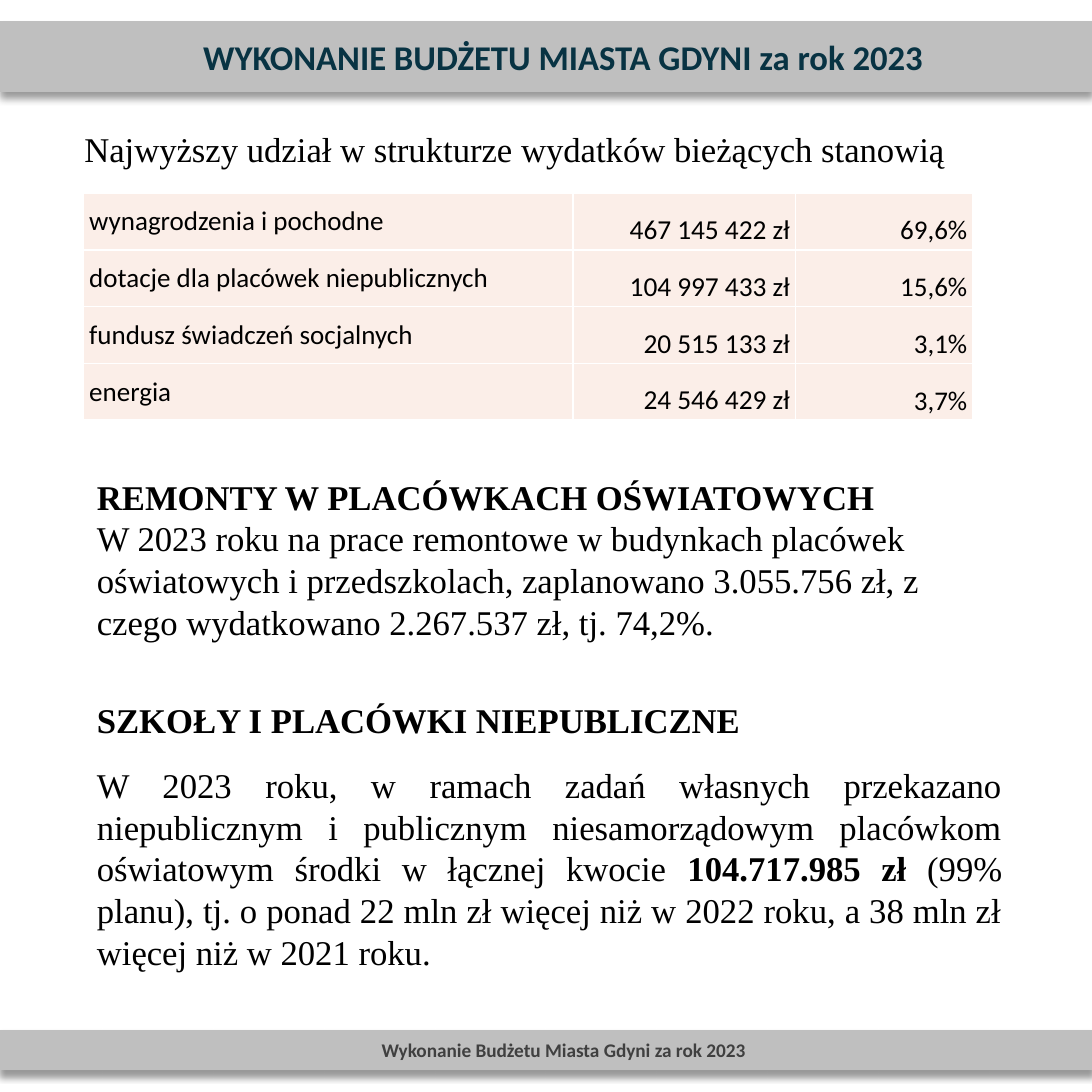
from lxml import etree
from pptx import Presentation
from pptx.dml.color import RGBColor
from pptx.enum.shapes import MSO_SHAPE
from pptx.enum.text import MSO_ANCHOR, MSO_AUTO_SIZE, PP_ALIGN
from pptx.oxml import parse_xml
from pptx.util import Pt

RECTANGLE = MSO_SHAPE.RECTANGLE
MIDDLE, BOTTOM = MSO_ANCHOR.MIDDLE, MSO_ANCHOR.BOTTOM
NO_FIT, GROW = MSO_AUTO_SIZE.NONE, MSO_AUTO_SIZE.SHAPE_TO_FIT_TEXT
LEFT, CENTER, RIGHT, JUSTIFY = PP_ALIGN.LEFT, PP_ALIGN.CENTER, PP_ALIGN.RIGHT, PP_ALIGN.JUSTIFY
DRAWING = "http://schemas.openxmlformats.org/drawingml/2006/main"
COLORS = {"bar": "BFBFBF", "title": "083343", "footer": "404040",
          "text": "000000", "cell": "FBEEE8", "border": "FFFFFF"}
SERIF, SANS = "Times New Roman", "Calibri"
SIDE = 566.64


def add_text(paragraph, text, size=18, font=SERIF, color="text", bold=False, align=None):
    if align is not None:
        paragraph.alignment = align
    run = paragraph.add_run()
    run.text = text
    run.font.size = Pt(size)
    run.font.name = font
    run.font.bold = bold
    run.font.color.rgb = RGBColor.from_string(COLORS[color])


def add_box(left, top, width, height):
    frame = slide.shapes.add_textbox(Pt(left), Pt(top), Pt(width), Pt(height)).text_frame
    frame.word_wrap = True
    frame.auto_size = GROW
    return frame


prs = Presentation()
prs.slide_width = prs.slide_height = Pt(SIDE)
slide = prs.slides.add_slide(prs.slide_layouts[5])

footer = slide.shapes.add_shape(RECTANGLE, 0, 0, Pt(SIDE), Pt(20))
bars = [
    (slide.shapes.title, 11.5, 36, "WYKONANIE BUDŻETU MIASTA GDYNI za rok 2023", 18, "title"),
    (footer, 535, 20, "Wykonanie Budżetu Miasta Gdyni za rok 2023", 10, "footer"),
]
for bar, top, height, caption, size, color in bars:
    bar.left, bar.top, bar.width, bar.height = 0, Pt(top), Pt(SIDE), Pt(height)
    bar.fill.solid()
    bar.fill.fore_color.rgb = RGBColor.from_string(COLORS["bar"])
    bar.line.color.rgb = RGBColor.from_string(COLORS["bar"])
    bar.line.width = Pt(1)
    bar.shadow.inherit = False
    effects = bar._element.spPr.find(f"{{{DRAWING}}}effectLst")
    effects.append(parse_xml(
        f'<a:outerShdw xmlns:a="{DRAWING}" blurRad="{Pt(4)}" dist="{Pt(3)}" dir="5400000" '
        'rotWithShape="0"><a:srgbClr val="000000"><a:alpha val="40000"/></a:srgbClr></a:outerShdw>'))
    frame = bar.text_frame
    frame.word_wrap = True
    frame.auto_size = NO_FIT
    frame.vertical_anchor = MIDDLE
    frame.margin_left = Pt(25.2)
    add_text(frame.paragraphs[0], caption, size=size, font=SANS, color=color, bold=True, align=CENTER)

renovations = add_box(43.2, 232.5, 448, 105)
heading = renovations.paragraphs[0]
heading.line_spacing = 1.5
heading.space_before = Pt(18)
add_text(heading, "REMONTY W PLACÓWKACH OŚWIATOWYCH", bold=True, align=JUSTIFY)
add_text(renovations.add_paragraph(),
         "W 2023 roku na prace remontowe w budynkach placówek oświatowych i przedszkolach, "
         "zaplanowano 3.055.756 zł, z czego wydatkowano 2.267.537 zł, tj. 74,2%.")

private_schools = add_box(43.2, 359.3, 484, 150.5)
add_text(private_schools.paragraphs[0], "SZKOŁY I PLACÓWKI NIEPUBLICZNE", bold=True, align=JUSTIFY)
funding = private_schools.add_paragraph()
add_text(funding, "W 2023 roku, w ramach zadań własnych przekazano niepublicznym i publicznym "
         "niesamorządowym placówkom oświatowym środki w łącznej kwocie ", align=JUSTIFY)
add_text(funding, "104.717.985 zł ", bold=True)
add_text(funding, "(99% planu), tj. o ponad 22 mln zł więcej niż w 2022 roku, "
         "a 38 mln zł więcej niż w 2021 roku.")
for paragraph in private_schools.paragraphs:
    paragraph.space_before = paragraph.space_after = Pt(6)

intro = add_box(13.7, 62.6, 507, 29).paragraphs[0]
intro.space_before, intro.space_after = Pt(12), Pt(6)
add_text(intro, "Najwyższy udział w strukturze wydatków bieżących stanowią", align=CENTER)

expenses = [
    ("wynagrodzenia i pochodne", "467 145 422", "69,6%"),
    ("dotacje dla placówek niepublicznych", "104 997 433", "15,6%"),
    ("fundusz świadczeń socjalnych", "20 515 133", "3,1%"),
    ("energia", "24 546 429", "3,7%"),
]
column_widths = [254, 115.4, 92.1]
row_height = 29.5
table = slide.shapes.add_table(len(expenses), len(column_widths), Pt(43.4), Pt(100.1),
                               Pt(sum(column_widths)), Pt(row_height * len(expenses))).table
table.first_row = table.horz_banding = False
for column, width in zip(table.columns, column_widths):
    column.width = Pt(width)
for row, expense in enumerate(expenses):
    table.rows[row].height = Pt(row_height)
    for col, value in enumerate(expense):
        cell = table.cell(row, col)
        cell.margin_left = cell.margin_right = Pt(2.9)
        cell.margin_top = cell.margin_bottom = Pt(1.44)
        cell.vertical_anchor = BOTTOM if col else MIDDLE
        properties = cell._tc.get_or_add_tcPr()
        for side in ("lnL", "lnR", "lnT", "lnB"):
            border = etree.SubElement(properties, f"{{{DRAWING}}}{side}", w=str(Pt(1)))
            solid = etree.SubElement(border, f"{{{DRAWING}}}solidFill")
            etree.SubElement(solid, f"{{{DRAWING}}}srgbClr", val=COLORS["border"])
        cell.fill.solid()
        cell.fill.fore_color.rgb = RGBColor.from_string(COLORS["cell"])
        entry = cell.text_frame.paragraphs[0]
        add_text(entry, value, size=14.2 if col == 1 else 14, font=SANS, align=RIGHT if col else LEFT)
        if col == 1:
            add_text(entry, " zł", size=14, font=SANS)

prs.save("out.pptx")
